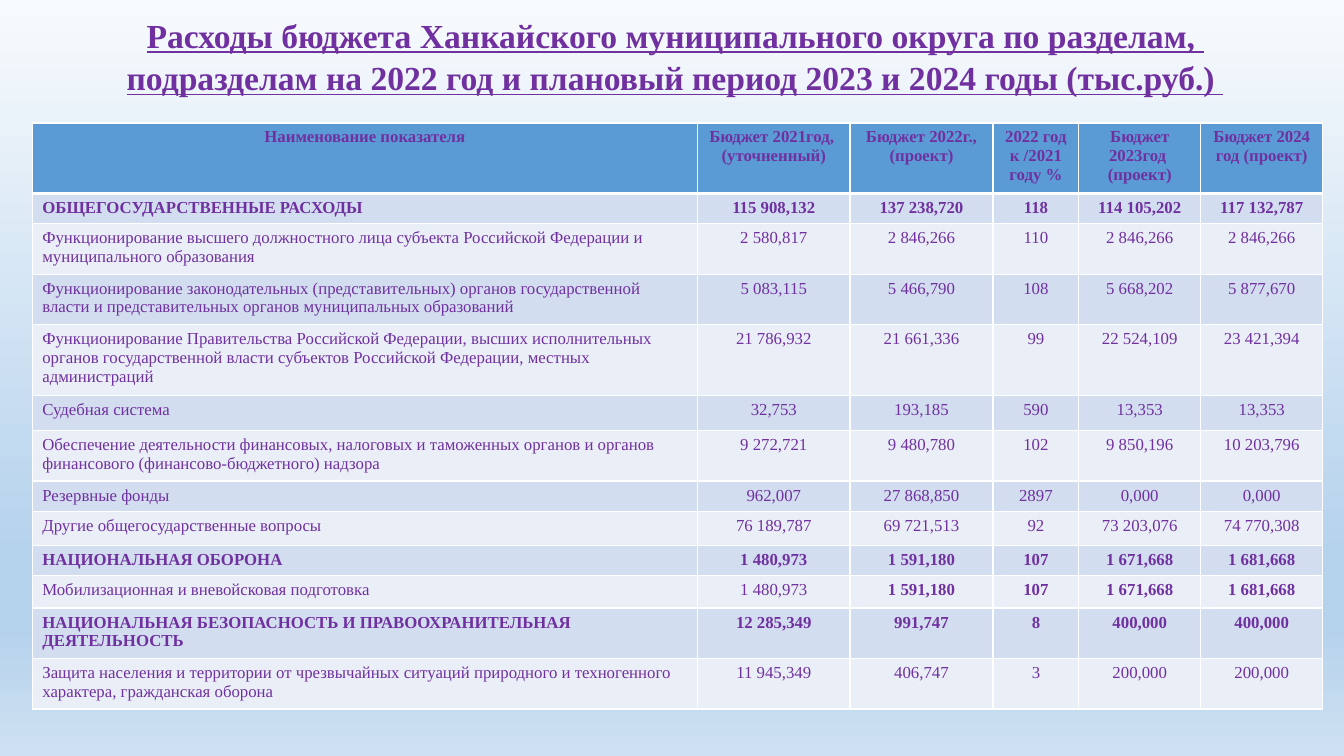
from lxml.etree import SubElement
from pptx import Presentation
from pptx.dml.color import RGBColor
from pptx.enum.text import MSO_ANCHOR, MSO_AUTO_SIZE, PP_ALIGN
from pptx.oxml.ns import qn
from pptx.util import Inches, Pt

PURPLE = RGBColor(0x70, 0x30, 0xA0)
WHITE = RGBColor(0xFF, 0xFF, 0xFF)
HEADER_BLUE = RGBColor(0x5B, 0x9B, 0xD5)
BAND_DARK = RGBColor(0xD2, 0xDE, 0xEF)
BAND_LIGHT = RGBColor(0xEA, 0xEF, 0xF7)
SKY = [(0, RGBColor(0xF7, 0xFA, 0xFD)), (74, RGBColor(0xB5, 0xD2, 0xEC)),
       (83, RGBColor(0xB5, 0xD2, 0xEC)), (100, RGBColor(0xCE, 0xE1, 0xF2))]

TITLE = ["Расходы бюджета Ханкайского муниципального округа по разделам, ",
         "подразделам на 2022 год и плановый период 2023 и 2024 годы (тыс.руб.) "]
HEADINGS = ["Наименование показателя", "Бюджет 2021год, \n(уточненный)",
            "Бюджет 2022г.,\n(проект)", "2022 год к /2021 году %",
            "Бюджет 2023год \n(проект)", "Бюджет 2024 год (проект)"]
COLUMN_WIDTHS = [6.6, 1.51, 1.42, 0.85, 1.21, 1.21]

# Each entry: row height, first bold column, cell texts
ALL_BOLD, VALUES_BOLD, PLAIN = 0, 2, len(HEADINGS)
EXPENSES = [
    (0.3, ALL_BOLD, ["ОБЩЕГОСУДАРСТВЕННЫЕ РАСХОДЫ",
                     "115 908,132", "137 238,720", "118", "114 105,202", "117 132,787"]),
    (0.44, PLAIN, ["Функционирование высшего должностного лица субъекта Российской Федерации "
                   "и муниципального образования",
                   "2 580,817", "2 846,266", "110", "2 846,266", "2 846,266"]),
    (0.44, PLAIN, ["Функционирование законодательных (представительных) органов государственной "
                   "власти и представительных органов муниципальных образований",
                   "5 083,115", "5 466,790", "108", "5 668,202", "5 877,670"]),
    (0.61, PLAIN, ["Функционирование Правительства Российской Федерации, высших исполнительных "
                   "органов государственной власти субъектов Российской Федерации, "
                   "местных администраций",
                   "21 786,932", "21 661,336", "99", "22 524,109", "23 421,394"]),
    (0.35, PLAIN, ["Судебная система",
                   "32,753", "193,185", "590", "13,353", "13,353"]),
    (0.44, PLAIN, ["Обеспечение деятельности финансовых, налоговых и таможенных органов "
                   "и органов финансового (финансово-бюджетного) надзора",
                   "9 272,721", "9 480,780", "102", "9 850,196", "10 203,796"]),
    (0.26, PLAIN, ["Резервные фонды",
                   "962,007", "27 868,850", "2897", "0,000", "0,000"]),
    (0.34, PLAIN, ["Другие общегосударственные вопросы",
                   "76 189,787", "69 721,513", "92", "73 203,076", "74 770,308"]),
    (0.26, ALL_BOLD, ["НАЦИОНАЛЬНАЯ ОБОРОНА",
                      "1 480,973", "1 591,180", "107", "1 671,668", "1 681,668"]),
    (0.32, VALUES_BOLD, ["Мобилизационная и вневойсковая подготовка",
                         "1 480,973", "1 591,180", "107", "1 671,668", "1 681,668"]),
    (0.44, ALL_BOLD, ["НАЦИОНАЛЬНАЯ БЕЗОПАСНОСТЬ И ПРАВООХРАНИТЕЛЬНАЯ ДЕЯТЕЛЬНОСТЬ",
                      "12 285,349", "991,747", "8", "400,000", "400,000"]),
    (0.44, PLAIN, ["Защита населения и территории от чрезвычайных ситуаций природного "
                   "и техногенного характера, гражданская оборона",
                   "11 945,349", "406,747", "3", "200,000", "200,000"]),
]


class BudgetSlide:
    font_name = "Times New Roman"
    color = PURPLE

    def __init__(self, presentation):
        self.slide = presentation.slides.add_slide(presentation.slide_layouts[5])

    def background(self, stops):
        fill = self.slide.background.fill
        fill.gradient()
        fill.gradient_angle = 270
        stop_list = self.slide.element.find(".//" + qn("a:gsLst"))
        stop_list.clear()
        for percent, color in stops:
            stop = SubElement(stop_list, qn("a:gs"), pos=str(percent * 1000))
            SubElement(stop, qn("a:srgbClr"), val=str(color))

    def set_text(self, frame, text, size, bold, align):
        frame.text = text
        for paragraph in frame.paragraphs:
            paragraph.alignment = align
            font = paragraph.font
            font.name, font.size, font.bold = self.font_name, Pt(size), bold
            font.color.rgb = self.color

    def title(self, lines, left, top, width, height):
        heading = self.slide.shapes.title
        heading.left, heading.top = Inches(left), Inches(top)
        heading.width, heading.height = Inches(width), Inches(height)
        frame = heading.text_frame
        self.set_text(frame, "\n".join(lines), 24, True, PP_ALIGN.CENTER)
        frame.word_wrap = True
        frame.auto_size = MSO_AUTO_SIZE.SHAPE_TO_FIT_TEXT
        frame.vertical_anchor = MSO_ANCHOR.TOP
        for paragraph in frame.paragraphs:
            paragraph.font.underline = True
            paragraph.line_spacing = 1.06

    def borders(self, cell, top=1, bottom=1):
        properties = cell._tc.get_or_add_tcPr()
        for side, points in (("L", 1), ("R", 1), ("T", top), ("B", bottom)):
            line = SubElement(properties, qn(f"a:ln{side}"), w=str(Pt(points)))
            fill = SubElement(line, qn("a:solidFill"))
            SubElement(fill, qn("a:srgbClr"), val=str(WHITE))

    def table(self, rows, widths, left, top):
        heights = [height for height, _, _ in rows]
        table = self.slide.shapes.add_table(
            len(rows), len(widths), Inches(left), Inches(top),
            Inches(sum(widths)), Inches(sum(heights))).table
        for column, width in zip(table.columns, widths):
            column.width = Inches(width)
        for r, (height, first_bold, texts) in enumerate(rows):
            table.rows[r].height = Inches(height)
            band = HEADER_BLUE if r == 0 else BAND_DARK if r % 2 else BAND_LIGHT
            for c, text in enumerate(texts):
                cell = table.cell(r, c)
                align = PP_ALIGN.LEFT if r and c == 0 else PP_ALIGN.CENTER
                self.set_text(cell.text_frame, text, 12, c >= first_bold, align)
                self.borders(cell, top=3 if r == 1 else 1, bottom=3 if r == 0 else 1)
                cell.fill.solid()
                cell.fill.fore_color.rgb = band


def main():
    presentation = Presentation()
    presentation.slide_width, presentation.slide_height = Inches(13.33), Inches(7.5)
    budget = BudgetSlide(presentation)

    # Background and heading
    budget.background(SKY)
    budget.title(TITLE, 0.32, 0.07, 12.75, 0.91)

    # Expenses by section
    budget.table([(0.7, ALL_BOLD, HEADINGS)] + EXPENSES, COLUMN_WIDTHS, 0.32, 1.22)

    presentation.save("out.pptx")


if __name__ == "__main__":
    main()
